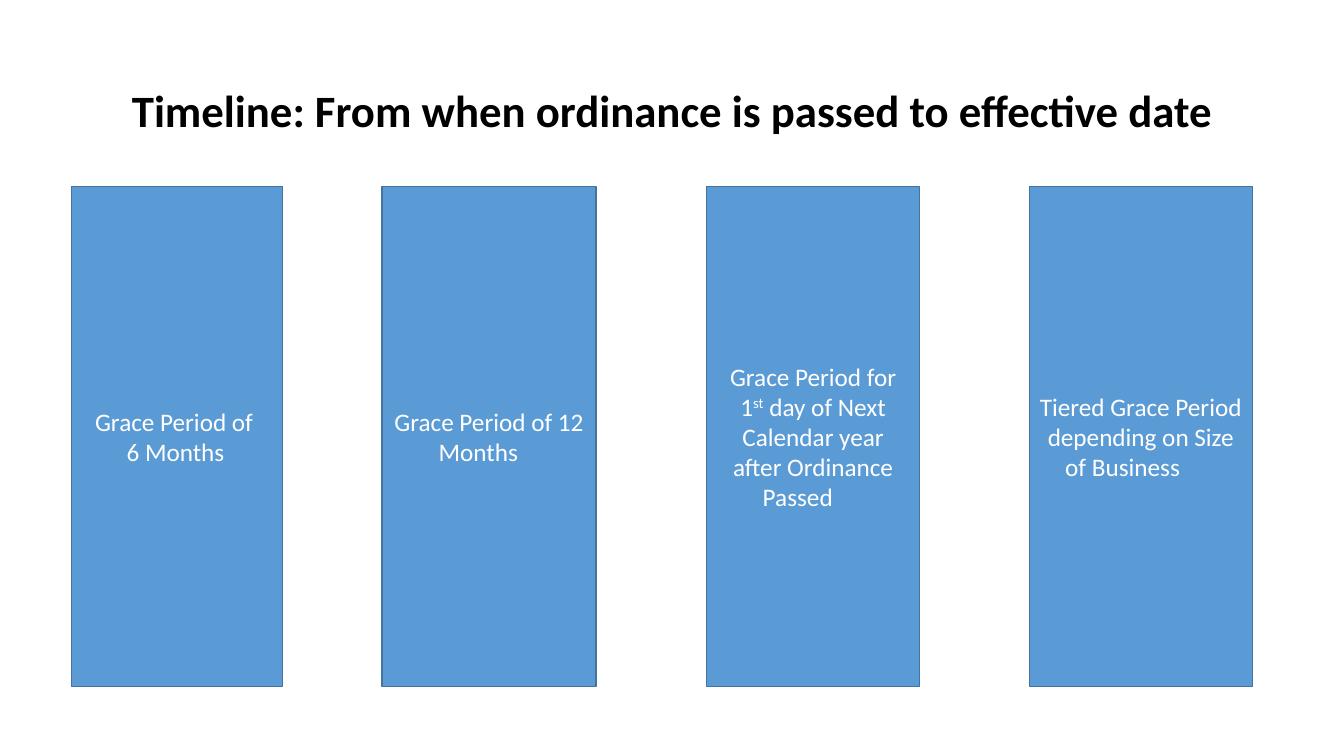
from pptx import Presentation
from pptx.dml.color import RGBColor
from pptx.enum.shapes import MSO_SHAPE
from pptx.enum.text import MSO_ANCHOR, PP_ALIGN
from pptx.util import Inches, Pt

BLACK = RGBColor(0x00, 0x00, 0x00)
WHITE = RGBColor(0xFF, 0xFF, 0xFF)
BLUE = RGBColor(0x5B, 0x9B, 0xD5)
DARK_BLUE = RGBColor(0x43, 0x73, 0x9E)

FONT = "Calibri"
SUPERSCRIPT = "st"
OPTION_TOP, OPTION_HEIGHT = 1.85, 4.96
OPTIONS = [
    (0.71, 2.09, [["Grace Period of "], ["6 Months\t"]]),
    (3.79, 2.12, [["Grace Period of 12 Months \t"]]),
    (7.01, 2.11, [["Grace Period for 1", SUPERSCRIPT,
                   " day of Next Calendar year after Ordinance Passed\t"]]),
    (10.21, 2.21, [["Tiered Grace Period depending on Size of Business\t"]]),
]


def write_paragraph(para, pieces, size, color, bold=False):
    """Fill a centred paragraph with runs, raising the ordinal suffix."""
    para.alignment = PP_ALIGN.CENTER
    for piece in pieces:
        span = para.add_run()
        span.text = piece
        span.font.name = FONT
        span.font.size = Pt(size)
        span.font.bold = bold
        span.font.color.rgb = color
        if piece == SUPERSCRIPT:
            span._r.get_or_add_rPr().set("baseline", "30000")


def add_title(page, text):
    """Add the bold slide title."""
    box = page.shapes.add_textbox(Inches(0.92), Inches(0.4), Inches(11.5), Inches(1.45))
    frame = box.text_frame
    frame.word_wrap = True
    frame.vertical_anchor = MSO_ANCHOR.MIDDLE
    para = frame.paragraphs[0]
    para.line_spacing = 0.9
    write_paragraph(para, [text], 32, BLACK, bold=True)


def add_option(page, left, width, paragraphs):
    """Add one grace period column."""
    column = page.shapes.add_shape(
        MSO_SHAPE.FLOWCHART_PROCESS,
        Inches(left), Inches(OPTION_TOP), Inches(width), Inches(OPTION_HEIGHT))
    column.shadow.inherit = False
    column.fill.solid()
    column.fill.fore_color.rgb = BLUE
    column.line.color.rgb = DARK_BLUE
    column.line.width = Pt(1)
    frame = column.text_frame
    frame.word_wrap = True
    frame.vertical_anchor = MSO_ANCHOR.MIDDLE
    for index, pieces in enumerate(paragraphs):
        para = frame.add_paragraph() if index else frame.paragraphs[0]
        write_paragraph(para, pieces, 18, WHITE)


def main():
    """Build the timeline slide and save it."""
    deck = Presentation()
    deck.slide_width = Inches(13.33)
    deck.slide_height = Inches(7.5)
    page = deck.slides.add_slide(deck.slide_layouts[6])
    add_title(page, "Timeline: From when ordinance is passed to effective date")
    for left, width, paragraphs in OPTIONS:
        add_option(page, left, width, paragraphs)
    deck.save("out.pptx")


if __name__ == "__main__":
    main()
